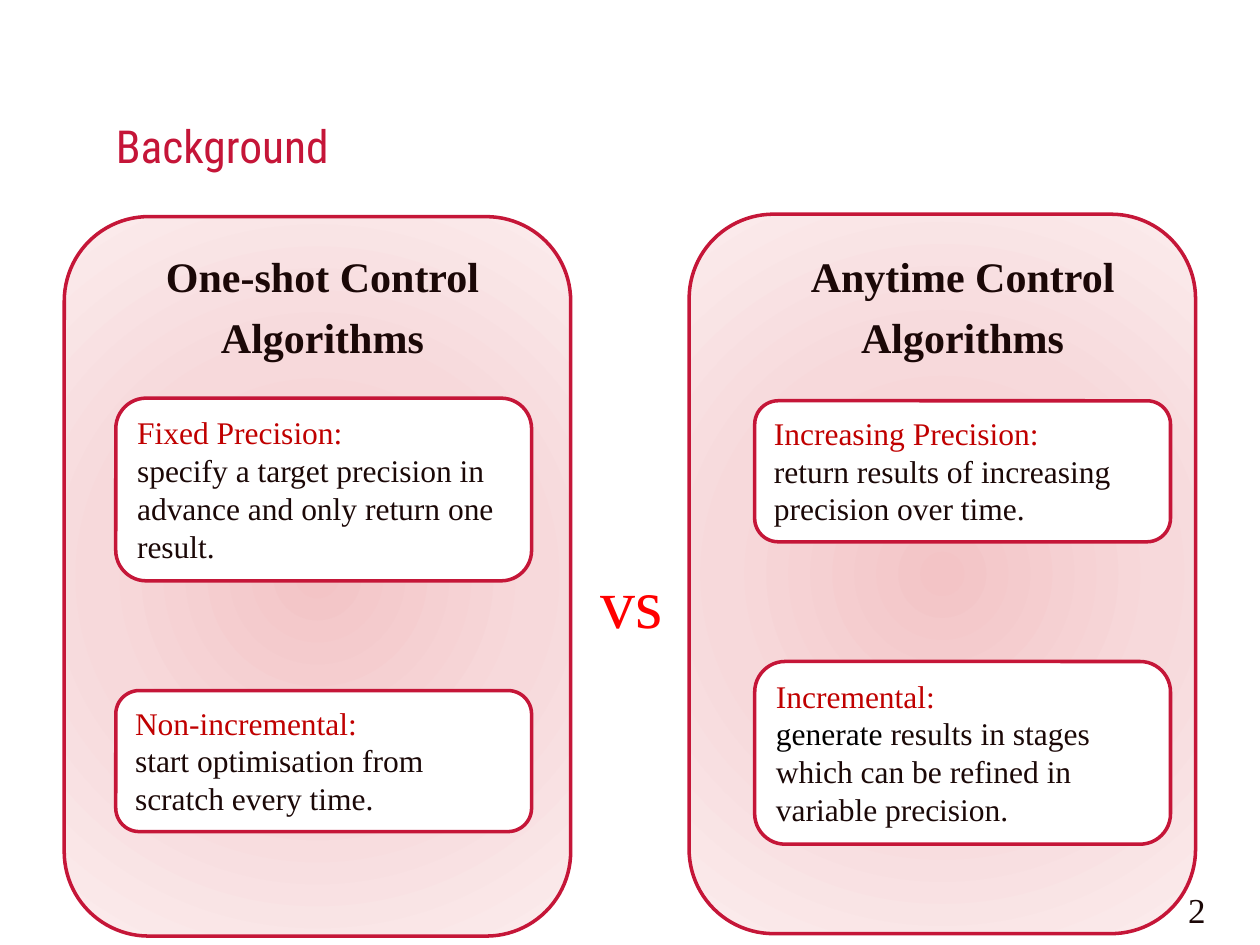
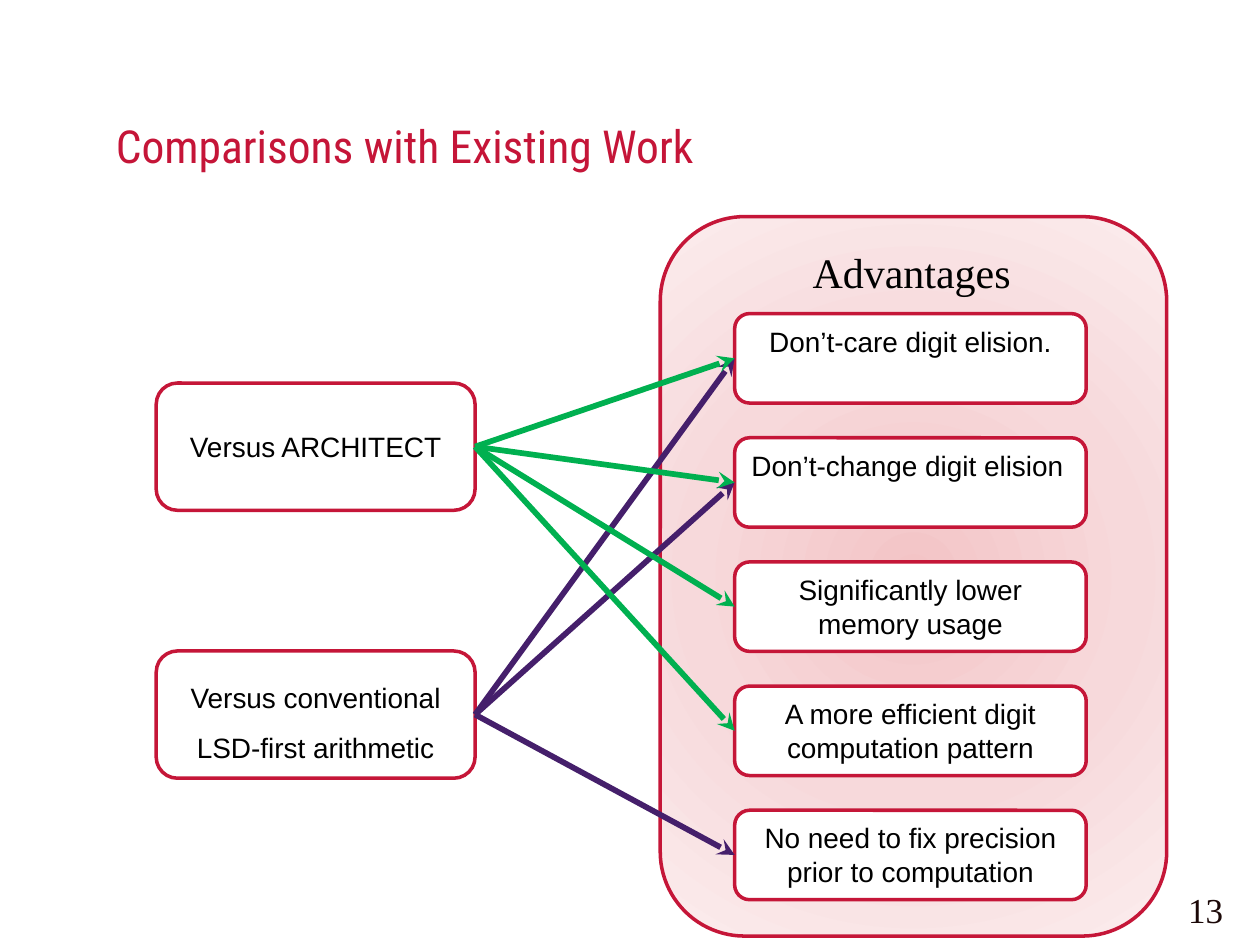
from lxml.etree import SubElement
from pptx import Presentation
from pptx.dml.color import RGBColor
from pptx.enum.shapes import MSO_CONNECTOR, MSO_SHAPE
from pptx.enum.text import MSO_ANCHOR as Anchor, PP_ALIGN as Align
from pptx.oxml import parse_xml
from pptx.oxml.ns import nsdecls, qn
from pptx.util import Pt

COLORS = {
    "title": "C51538", "border": "C51638", "text": "1B0807", "black": "000000",
    "white": "FFFFFF", "keyword": "C00000", "versus": "FF0000",
    "green": "00B050", "purple": "451F6B",
}
PANEL_GRADIENT = [(0, "F3C4C6"), (50, "F7D9DB"), (100, "FBECED")]
SERIF, SANS, TITLE_FONT = "Times New Roman", "Arial", "Roboto Condensed"
PANEL_SIZE = (289.4, 411.1)

# Cards: top, height, keyword, then the explanation as (text, colour) runs
CARD_WIDTH = 237.6
ALGORITHMS = [
    {
        "panel": (36.7, 123.8), "heading": "One-shot Control Algorithms",
        "heading_left": 51.1, "card_left": 66.2,
        "cards": [
            (227.5, 104.4, "Fixed Precision:",
             [("specify a target precision in advance and only return one result.", "text")]),
            (394.6, 80.6, "Non-incremental:",
             [("start optimisation from scratch every time.", "text")]),
        ],
    },
    {
        "panel": (393.8, 122.4), "heading": "Anytime Control Algorithms",
        "heading_left": 416.9, "card_left": 431.3,
        "cards": [
            (229, 80.6, "Increasing Precision:",
             [("return results of increasing precision over time.", "text")]),
            (378, 104.4, "Incremental:",
             [("generate ", "black"),
              ("results in stages which can be refined in variable precision.", "text")]),
        ],
    },
]

ADVANTAGES = [
    ("Don’t-care digit elision.", Align.CENTER),
    ("Don’t-change digit elision", Align.LEFT),
    ("Significantly lower memory usage", Align.CENTER),
    ("A more efficient digit computation pattern", Align.CENTER),
    ("No need to fix precision prior to computation", Align.CENTER),
]
ADVANTAGE_LEFT, ADVANTAGE_TOP, ADVANTAGE_PITCH = 419.8, 179.2, 70.95
ADVANTAGE_SIZE = (200.9, 51.1)

# Rivals: text, top, anchor, line spacing, arrow colour, advantages reached
RIVALS = [
    ("Versus conventional LSD-first arithmetic", 372, Anchor.TOP, 1.5, "purple", [1, 0, 4]),
    ("Versus ARCHITECT", 218.9, Anchor.MIDDLE, 1, "green", [1, 0, 2, 3]),
]
RIVAL_LEFT, RIVAL_SIZE = 89.3, (182.2, 72.7)


def rgb(color):
    return RGBColor.from_string(COLORS[color])


def add_run(paragraph, text, size, color, font=SERIF, bold=False):
    run = paragraph.add_run()
    run.text = text
    run.font.size, run.font.name, run.font.bold = Pt(size), font, bold
    run.font.color.rgb = rgb(color)


def add_label(slide, box, text, size, color, align=Align.LEFT, spacing=1, bold=False):
    frame = slide.shapes.add_textbox(*map(Pt, box)).text_frame
    frame.word_wrap = True
    paragraph = frame.paragraphs[0]
    paragraph.alignment, paragraph.line_spacing = align, spacing
    add_run(paragraph, text, size, color, bold=bold)


def add_rounded(slide, left, top, width, height):
    shape = slide.shapes.add_shape(
        MSO_SHAPE.ROUNDED_RECTANGLE, Pt(left), Pt(top), Pt(width), Pt(height))
    shape.shadow.inherit = False
    shape.fill.solid()
    shape.fill.fore_color.rgb = rgb("white")
    shape.line.color.rgb = rgb("border")
    shape.line.width = Pt(2)
    shape.text_frame.word_wrap = True
    shape.text_frame.vertical_anchor = Anchor.TOP
    shape.text_frame.paragraphs[0].alignment = Align.LEFT
    return shape


def add_panel(slide, left, top):
    """Add a large rounded panel with a radial gradient."""
    properties = add_rounded(slide, left, top, *PANEL_SIZE)._element.spPr
    stops = "".join(
        f'<a:gs pos="{pos * 1000}"><a:srgbClr val="{color}"/></a:gs>'
        for pos, color in PANEL_GRADIENT)
    gradient = parse_xml(
        f'<a:gradFill {nsdecls("a")} rotWithShape="1"><a:gsLst>{stops}</a:gsLst>'
        '<a:path path="circle"><a:fillToRect l="50000" t="50000" r="50000" b="50000"/>'
        '</a:path></a:gradFill>')
    properties.replace(properties.find(qn("a:solidFill")), gradient)


def add_text_card(slide, box, text, align, anchor=Anchor.TOP, spacing=1):
    card = add_rounded(slide, *box)
    card.text_frame.vertical_anchor = anchor
    paragraph = card.text_frame.paragraphs[0]
    paragraph.alignment, paragraph.line_spacing = align, spacing
    add_run(paragraph, text, 16, "black", SANS)
    return card


def add_arrow(slide, source, target, color):
    """Connect the right side of source to the left side of target."""
    arrow = slide.shapes.add_connector(MSO_CONNECTOR.STRAIGHT, 0, 0, 0, 0)
    arrow.begin_connect(source, 3)
    arrow.end_connect(target, 1)
    arrow.line.color.rgb = rgb(color)
    arrow.line.width = Pt(3.25)
    properties = arrow._element.spPr
    SubElement(properties.find(qn("a:ln")), qn("a:tailEnd"), type="stealth")
    SubElement(properties, qn("a:effectLst"))


def add_slide(deck, title, number):
    slide = deck.slides.add_slide(deck.slide_layouts[5])
    heading = slide.shapes.title
    heading.left, heading.top, heading.width, heading.height = map(Pt, (66.2, 48.2, 594, 50.4))
    frame = heading.text_frame
    frame.margin_left = frame.margin_top = frame.margin_right = frame.margin_bottom = 0
    frame.vertical_anchor = Anchor.BOTTOM
    frame.paragraphs[0].alignment = Align.LEFT
    add_run(frame.paragraphs[0], title, 26, "title", TITLE_FONT)
    add_label(slide, (671.8, 504, 48.2, 31.7), number, 20, "text")
    return slide


def build_background(deck):
    slide = add_slide(deck, "Background", "2")
    for side in ALGORITHMS:
        add_panel(slide, *side["panel"])
        add_label(slide, (side["heading_left"], 133.9, 266.4, 75), side["heading"],
                  24, "text", Align.CENTER, 1.2, bold=True)
        for top, height, keyword, explanation in side["cards"]:
            frame = add_rounded(slide, side["card_left"], top, CARD_WIDTH, height).text_frame
            add_run(frame.paragraphs[0], keyword, 18, "keyword")
            detail = frame.add_paragraph()
            detail.alignment = Align.LEFT
            for text, color in explanation:
                add_run(detail, text, 18, color)
    add_label(slide, (336.2, 306, 69.8, 60.5), "vs", 40, "versus", spacing=1.2)


def build_comparisons(deck):
    slide = add_slide(deck, "Comparisons with Existing Work", "13")
    add_panel(slide, 377.3, 123.8)
    add_label(slide, (457.2, 137.5, 128.9, 36), "Advantages", 24, "black")
    advantages = [
        add_text_card(slide, (ADVANTAGE_LEFT, ADVANTAGE_TOP + row * ADVANTAGE_PITCH,
                              *ADVANTAGE_SIZE), text, align)
        for row, (text, align) in enumerate(ADVANTAGES)]
    for text, top, anchor, spacing, color, reached in RIVALS:
        rival = add_text_card(slide, (RIVAL_LEFT, top, *RIVAL_SIZE), text,
                              Align.CENTER, anchor, spacing)
        for row in reached:
            add_arrow(slide, rival, advantages[row], color)


def main():
    deck = Presentation()
    deck.slide_width, deck.slide_height = Pt(720), Pt(540)
    build_background(deck)
    build_comparisons(deck)
    deck.save("out.pptx")


if __name__ == "__main__":
    main()
